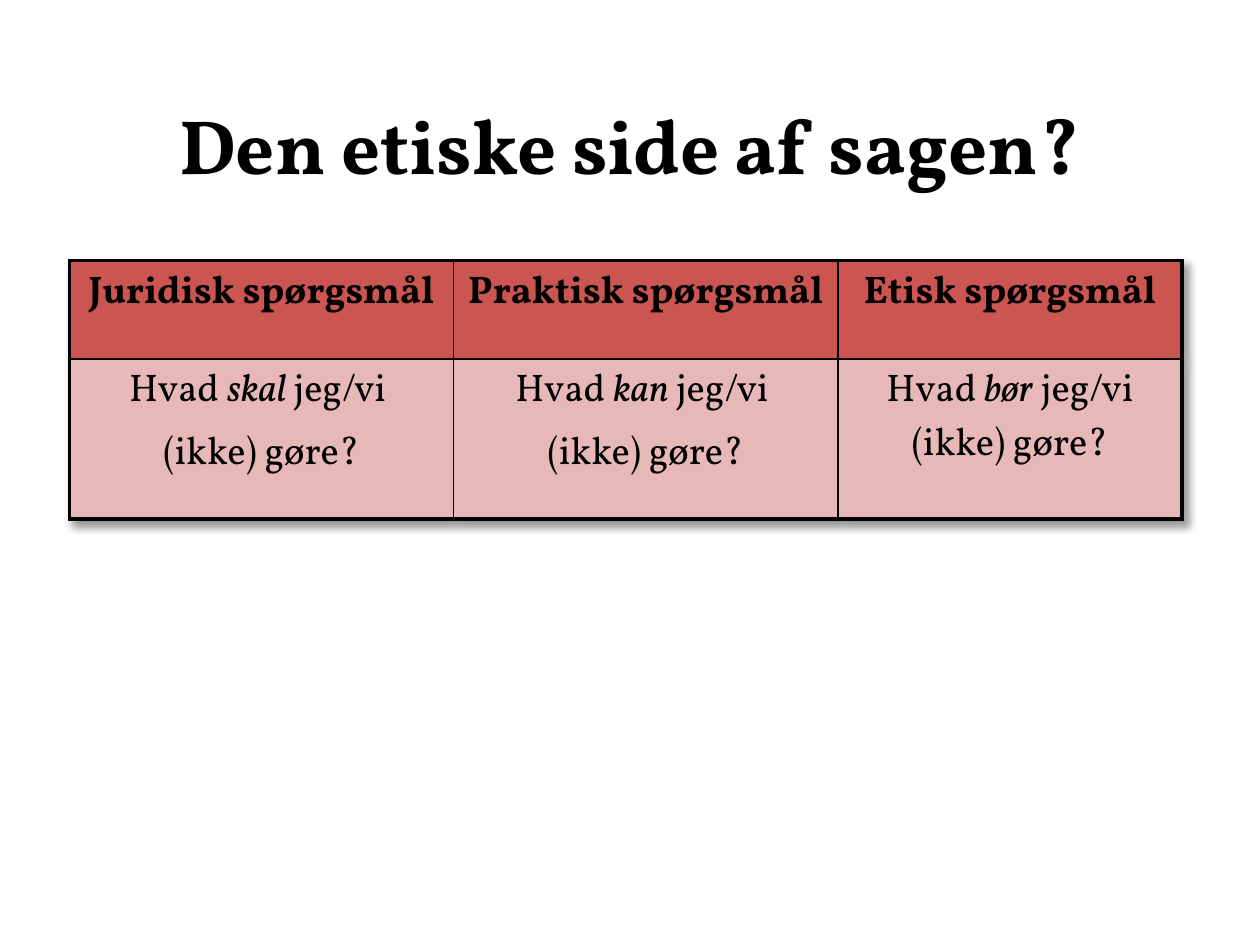
from lxml.etree import SubElement
from pptx import Presentation
from pptx.dml.color import RGBColor
from pptx.enum.text import MSO_ANCHOR as Anchor, PP_ALIGN as Align
from pptx.oxml import parse_xml
from pptx.oxml.ns import nsdecls, qn
from pptx.util import Pt

FONT = "Vollkorn"
BLACK = RGBColor(0x00, 0x00, 0x00)
HEADER_RED = RGBColor(0xCB, 0x56, 0x51)
BODY_PINK = RGBColor(0xE6, 0xB9, 0xB8)
OUTER, INNER = 2.25, 1

COLUMN_WIDTHS = [219.6, 219.6, 196.6]
ROW_HEIGHTS = [56.2, 91.4]
HEADERS = ["Juridisk spørgsmål", "Praktisk spørgsmål", "Etisk spørgsmål"]
# Each question is a list of paragraphs of (text, italic) spans.
ANSWER = [("(ikke) gøre?", False)]
QUESTIONS = [
    [[("Hvad ", False), ("skal ", True), ("jeg/vi ", False)], ANSWER],
    [[("Hvad ", False), ("kan ", True), ("jeg/vi ", False)], ANSWER],
    [[("Hvad ", False), ("bør", True), (" jeg/vi (ikke) gøre?", False)]],
]


def write_text(frame, paragraphs, size, bold=False, space_before=0):
    for index, spans in enumerate(paragraphs):
        para = frame.add_paragraph() if index else frame.paragraphs[0]
        para.alignment = Align.CENTER
        para.space_before = Pt(space_before)
        for text, italic in spans:
            span = para.add_run()
            span.text = text
            font = span.font
            font.name, font.size = FONT, Pt(size)
            font.bold, font.italic = bold, italic
            font.color.rgb = BLACK


def add_title(page, text):
    box = page.shapes.add_textbox(0, Pt(43.2), Pt(720), Pt(77.8))
    frame = box.text_frame
    frame.word_wrap = True
    frame.vertical_anchor = Anchor.MIDDLE
    write_text(frame, [[(text, False)]], size=44, bold=True)


def set_borders(cell, **widths):
    """Draw black borders; the sides L, R, T and B must come in that order."""
    properties = cell._tc.get_or_add_tcPr()
    for index, (side, width) in enumerate(widths.items()):
        line = parse_xml(f'<a:ln{side} {nsdecls("a")} w="{Pt(width)}"/>')
        fill = SubElement(line, qn("a:solidFill"))
        SubElement(fill, qn("a:srgbClr"), val=str(BLACK))
        properties.insert(index, line)


def add_shadow(table):
    table._tbl.tblPr.insert(0, parse_xml(
        f'<a:effectLst {nsdecls("a")}>'
        f'<a:outerShdw blurRad="{Pt(4)}" dist="{Pt(4)}" dir="2700000" algn="tl">'
        '<a:srgbClr val="000000"><a:alpha val="40000"/></a:srgbClr>'
        '</a:outerShdw></a:effectLst>'))


def add_question_table(page):
    rows = [[[[(header, False)]] for header in HEADERS], QUESTIONS]
    last_row, last_column = len(rows) - 1, len(HEADERS) - 1
    table = page.shapes.add_table(
        len(rows), len(HEADERS), Pt(39.6), Pt(149),
        Pt(sum(COLUMN_WIDTHS)), Pt(sum(ROW_HEIGHTS))).table
    table.horz_banding = False
    add_shadow(table)
    for column, width in zip(table.columns, COLUMN_WIDTHS):
        column.width = Pt(width)
    for r, row in enumerate(rows):
        table.rows[r].height = Pt(ROW_HEIGHTS[r])
        for c, paragraphs in enumerate(row):
            cell = table.cell(r, c)
            cell.fill.solid()
            cell.fill.fore_color.rgb = BODY_PINK if r else HEADER_RED
            set_borders(cell,
                        L=INNER if c else OUTER,
                        R=OUTER if c == last_column else INNER,
                        T=INNER if r else OUTER,
                        B=OUTER if r == last_row else INNER)
            write_text(cell.text_frame, paragraphs, size=22,
                       bold=r == 0, space_before=5)


def main():
    deck = Presentation()
    deck.slide_width, deck.slide_height = Pt(720), Pt(540)
    page = deck.slides.add_slide(deck.slide_layouts[6])
    add_title(page, "Den etiske side af sagen?")
    add_question_table(page)
    deck.save("out.pptx")


if __name__ == "__main__":
    main()
